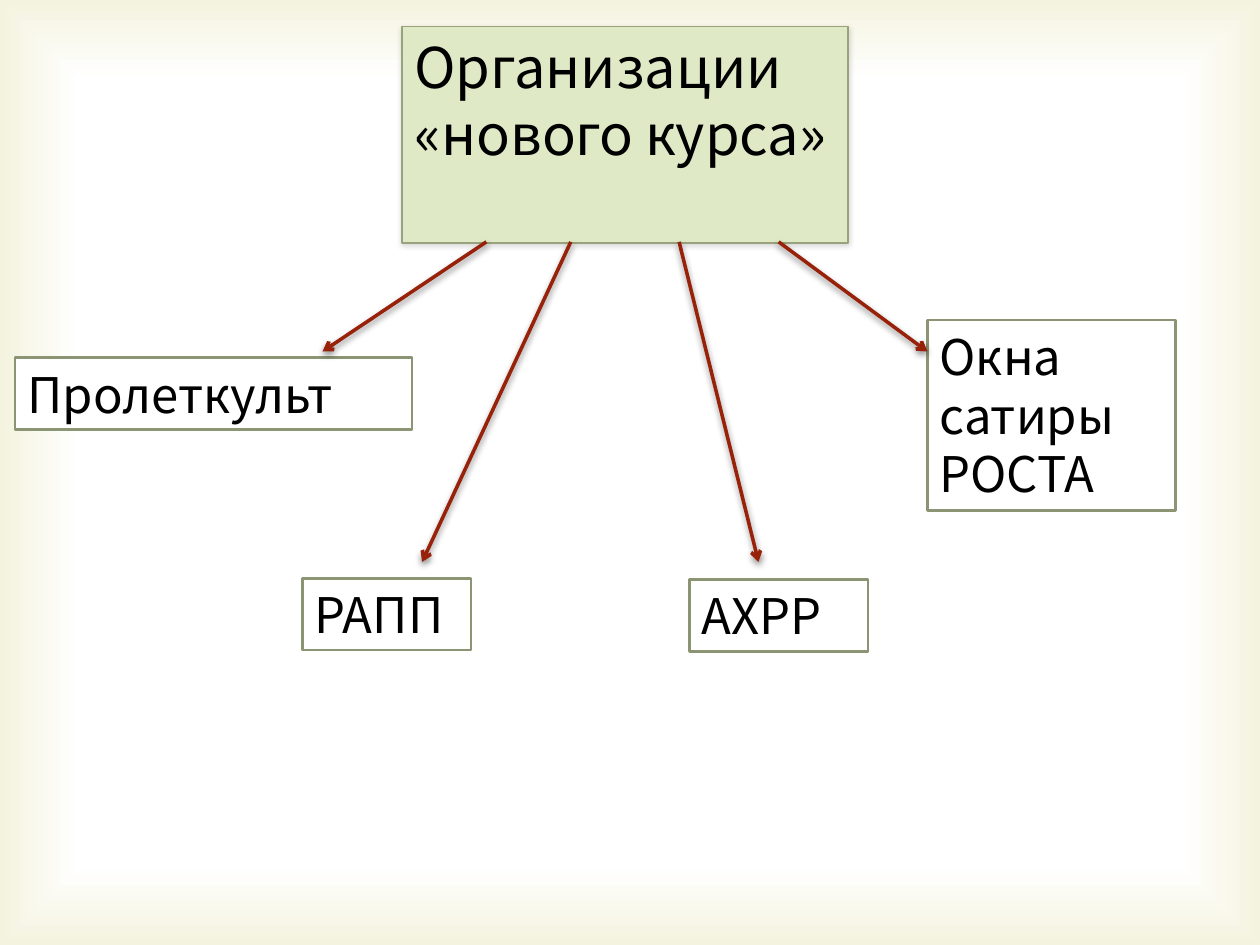
"""Build a slide with a scheme of the "new course" organisations."""
from lxml.etree import SubElement
from pptx import Presentation
from pptx.dml.color import RGBColor
from pptx.enum.shapes import MSO_CONNECTOR, MSO_SHAPE
from pptx.enum.text import MSO_ANCHOR, PP_ALIGN
from pptx.oxml.ns import qn
from pptx.util import Inches, Pt

FONT = "Noto Sans CJK KR"
BLACK = RGBColor(0x00, 0x00, 0x00)
WHITE = RGBColor(0xFF, 0xFF, 0xFF)
CREAM = RGBColor(0xF4, 0xF3, 0xDF)
GREEN = RGBColor(0xDF, 0xE9, 0xC5)
EDGE = RGBColor(0x98, 0xA2, 0x7C)
OLIVE = RGBColor(0x8C, 0x95, 0x73)
RED = RGBColor(0x97, 0x21, 0x09)

HEAD = (3.19, 0.21, 3.54, 1.72)
GROUPS = [
    ("Пролеткульт", (0.12, 2.84, 3.15, 0.57)),
    ("РАПП", (2.4, 4.59, 1.34, 0.57)),
    ("АХРР", (5.47, 4.6, 1.42, 0.57)),
    ("Окна сатиры РОСТА", (7.36, 2.54, 1.97, 1.51)),
]
START = 1.92
ARROWS = [(3.86, 2.56, 2.79), (4.53, 3.35, 4.46), (5.39, 6.02, 4.46), (6.18, 7.36, 2.79)]


def add_rect(slide, area):
    shape = slide.shapes.add_shape(MSO_SHAPE.RECTANGLE, *map(Inches, area))
    shape.shadow.inherit = False
    return shape


def add_shade(shape, alpha, blur, dist):
    props = shape._element.spPr
    effects = props.find(qn("a:effectLst"))
    if effects is None:
        effects = SubElement(props, qn("a:effectLst"))
    shade = SubElement(effects, qn("a:outerShdw"), blurRad=str(Pt(blur)),
                       dist=str(Pt(dist)), dir="5400000", rotWithShape="0")
    color = SubElement(shade, qn("a:srgbClr"), val=str(BLACK))
    SubElement(color, qn("a:alpha"), val=str(alpha * 1000))


def add_glow(slide, size):
    shape = add_rect(slide, (0, 0, *size))
    shape.line.fill.background()
    shape.fill.gradient()
    for stop, place, color in zip(shape.fill.gradient_stops, (0.83, 1), (WHITE, CREAM)):
        stop.position = place
        stop.color.rgb = color
    grad = shape._element.spPr.find(qn("a:gradFill"))
    grad.remove(grad.find(qn("a:lin")))
    route = SubElement(grad, qn("a:path"), path="rect")
    SubElement(route, qn("a:fillToRect"), {side: "50000" for side in "ltrb"})


def add_box(slide, text, area, size, fill, edge, width):
    shape = add_rect(slide, area)
    shape.fill.solid()
    shape.fill.fore_color.rgb = fill
    shape.line.color.rgb = edge
    shape.line.width = Pt(width)
    frame = shape.text_frame
    frame.word_wrap = True
    frame.vertical_anchor = MSO_ANCHOR.TOP
    frame.text = text
    para = frame.paragraphs[0]
    para.alignment = PP_ALIGN.LEFT
    para.font.name = FONT
    para.font.size = Pt(size)
    para.font.color.rgb = BLACK
    return shape


def add_arrow(slide, *points):
    arrow = slide.shapes.add_connector(MSO_CONNECTOR.STRAIGHT, *map(Inches, points))
    arrow.line.color.rgb = RED
    arrow.line.width = Pt(2)
    SubElement(arrow.line._get_or_add_ln(), qn("a:tailEnd"), type="arrow")
    add_shade(arrow, 46, 4, 2)


def main():
    deck = Presentation()
    deck.slide_width, deck.slide_height = Inches(10), Inches(7.5)
    slide = deck.slides.add_slide(deck.slide_layouts[6])
    add_glow(slide, (10, 7.5))
    head = add_box(slide, "Организации «нового курса»", HEAD, 32, GREEN, EDGE, 1)
    add_shade(head, 15, 3, 1)
    for name, area in GROUPS:
        add_box(slide, name, area, 28, WHITE, OLIVE, 1.5)
    for left, right, end in ARROWS:
        add_arrow(slide, left, START, right, end)
    deck.save("out.pptx")


if __name__ == "__main__":
    main()
